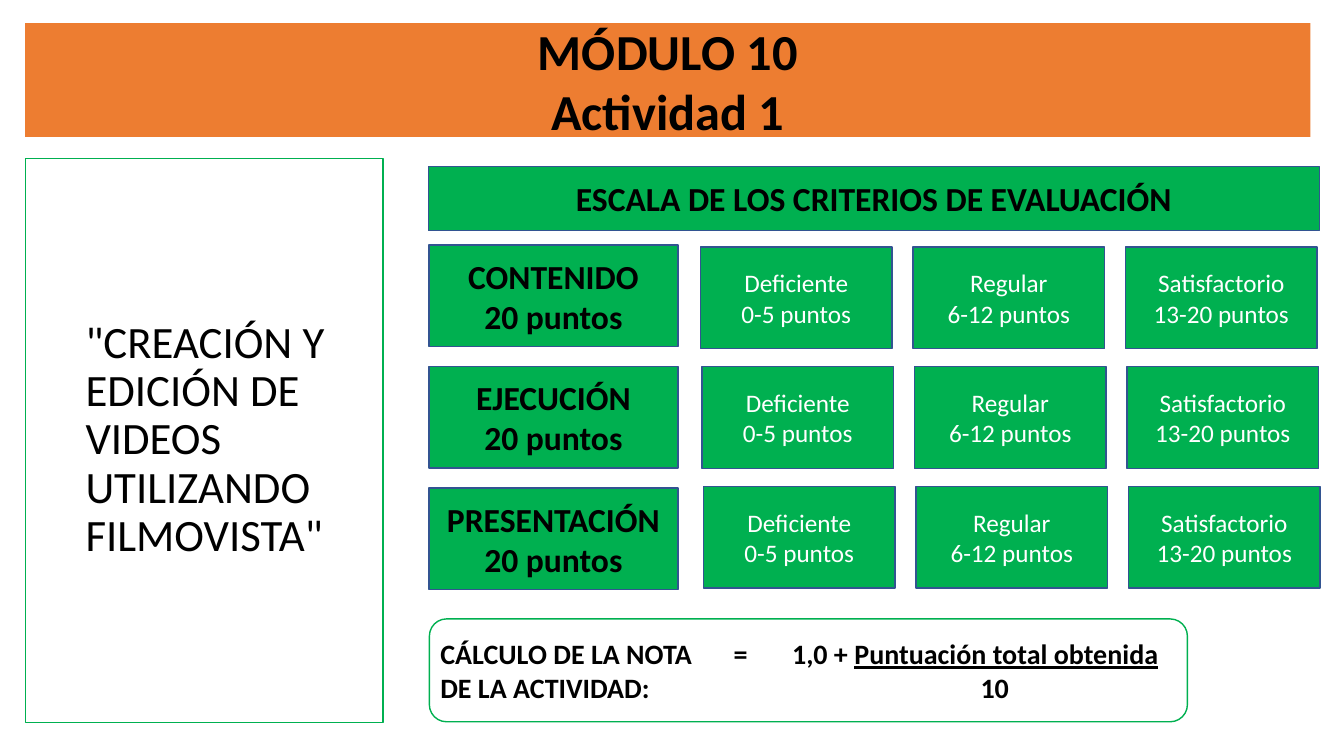
from pptx import Presentation
from pptx.dml.color import RGBColor as Rgb
from pptx.enum.shapes import MSO_SHAPE as Form
from pptx.enum.text import MSO_ANCHOR as Anchor, PP_ALIGN as Align
from pptx.util import Inches, Pt
from lxml.etree import SubElement as Sub
from pptx.oxml.ns import qn

COLS, ROWS = 160, 90
GREEN, NAVY, BLACK, WHITE = "00B050", "325491", "000000", "FFFFFF"


def tint(code):
    return Rgb.from_string(code)


class Board:
    """Draws styled boxes and text on a grid of 160 columns by 90 rows."""

    font = "Calibri"

    def __init__(self, deck):
        self.deck = deck
        self.page = deck.slides.add_slide(deck.slide_layouts[6])

    def area(self, col, row, wide, high):
        unit_x = self.deck.slide_width / COLS
        unit_y = self.deck.slide_height / ROWS
        return (round(col * unit_x), round(row * unit_y),
                round(wide * unit_x), round(high * unit_y))

    def box(self, spot, fill=None, edge=None, form=Form.RECTANGLE):
        item = self.page.shapes.add_shape(form, *self.area(*spot))
        item.shadow.inherit = False
        if fill:
            item.fill.solid()
            item.fill.fore_color.rgb = tint(fill)
        else:
            item.fill.background()
        if edge:
            item.line.color.rgb = tint(edge)
            item.line.width = Pt(1)
        else:
            item.line.fill.background()
        item.text_frame.vertical_anchor = Anchor.MIDDLE
        return item.text_frame

    def note(self, spot):
        return self.page.shapes.add_textbox(*self.area(*spot)).text_frame

    def label(self, frame, lines, size, color=BLACK, bold=False, align=Align.CENTER):
        frame.word_wrap = True
        for at, line in enumerate(lines):
            para = frame.add_paragraph() if at else frame.paragraphs[0]
            para.alignment = align
            for text, under in [(line, False)] if isinstance(line, str) else line:
                run = para.add_run()
                run.text = text
                run.font.name = self.font
                run.font.size = Pt(size)
                run.font.bold = bold
                run.font.underline = under
                run.font.color.rgb = tint(color)
        return frame.paragraphs

    def indent(self, paras, inches):
        for para in paras:
            para.level = 1
            para.line_spacing = 0.9
            props = para._p.get_or_add_pPr()
            props.set("marL", str(Inches(inches)))
            props.set("indent", "0")

    def tab(self, para, inches, align):
        stops = Sub(para._p.get_or_add_pPr(), qn("a:tabLst"))
        Sub(stops, qn("a:tab"), pos=str(Inches(inches)), algn=align)


def main():
    deck = Presentation()
    deck.slide_width, deck.slide_height = Inches(40 / 3), Inches(7.5)
    board = Board(deck)

    title = board.box((3, 2.76, 153, 13.56), "ED7D31")
    board.label(title, ["MÓDULO 10", "Actividad 1"], 36, bold=True)

    topic = board.box((3, 18.84, 42.6, 67.2), edge=GREEN)
    words = ['"CREACIÓN Y', "EDICIÓN DE", "VIDEOS", "UTILIZANDO", 'FILMOVISTA"']
    board.indent(board.label(topic, words, 32, align=Align.LEFT), 0.5)

    head = board.box((51, 19.8, 106.08, 7.68), GREEN, NAVY)
    board.label(head, ["ESCALA DE LOS CRITERIOS DE EVALUACIÓN"], 24, bold=True)

    grades = [("Deficiente", "0-5"), ("Regular", "6-12"), ("Satisfactorio", "13-20")]
    for row, name in enumerate(["CONTENIDO", "EJECUCIÓN", "PRESENTACIÓN"]):
        topic = board.box((51.06, 29.16 + 14.46 * row, 29.64, 12.12), GREEN, NAVY)
        board.label(topic, [name, "20 puntos"], 24, bold=True)
        for col, (grade, span) in enumerate(grades):
            spot = (83.4 + 25.3 * col + 0.18 * row, 29.4 + 14.25 * row, 22.8, 12.12)
            card = board.box(spot, GREEN, NAVY)
            board.label(card, [grade, f"{span} puntos"], 18, WHITE)

    mark = board.note((51.24, 75.24, 36, 9.24))
    board.label(mark, ["CÁLCULO DE LA NOTA DE LA ACTIVIDAD:"], 20, bold=True, align=Align.LEFT)
    sums = board.note((86.16, 75.24, 59.76, 9.24))
    ratio = [("=\t1,0 + ", False), ("Puntuación total obtenida", True)]
    top, base = board.label(sums, [ratio, "\t10"], 20, bold=True, align=Align.LEFT)
    board.tab(top, 0.58, "l")
    board.tab(base, 2.59, "ctr")
    board.box((51.12, 73.68, 90.24, 12.24), edge=GREEN, form=Form.ROUNDED_RECTANGLE)

    deck.save("out.pptx")


if __name__ == "__main__":
    main()
